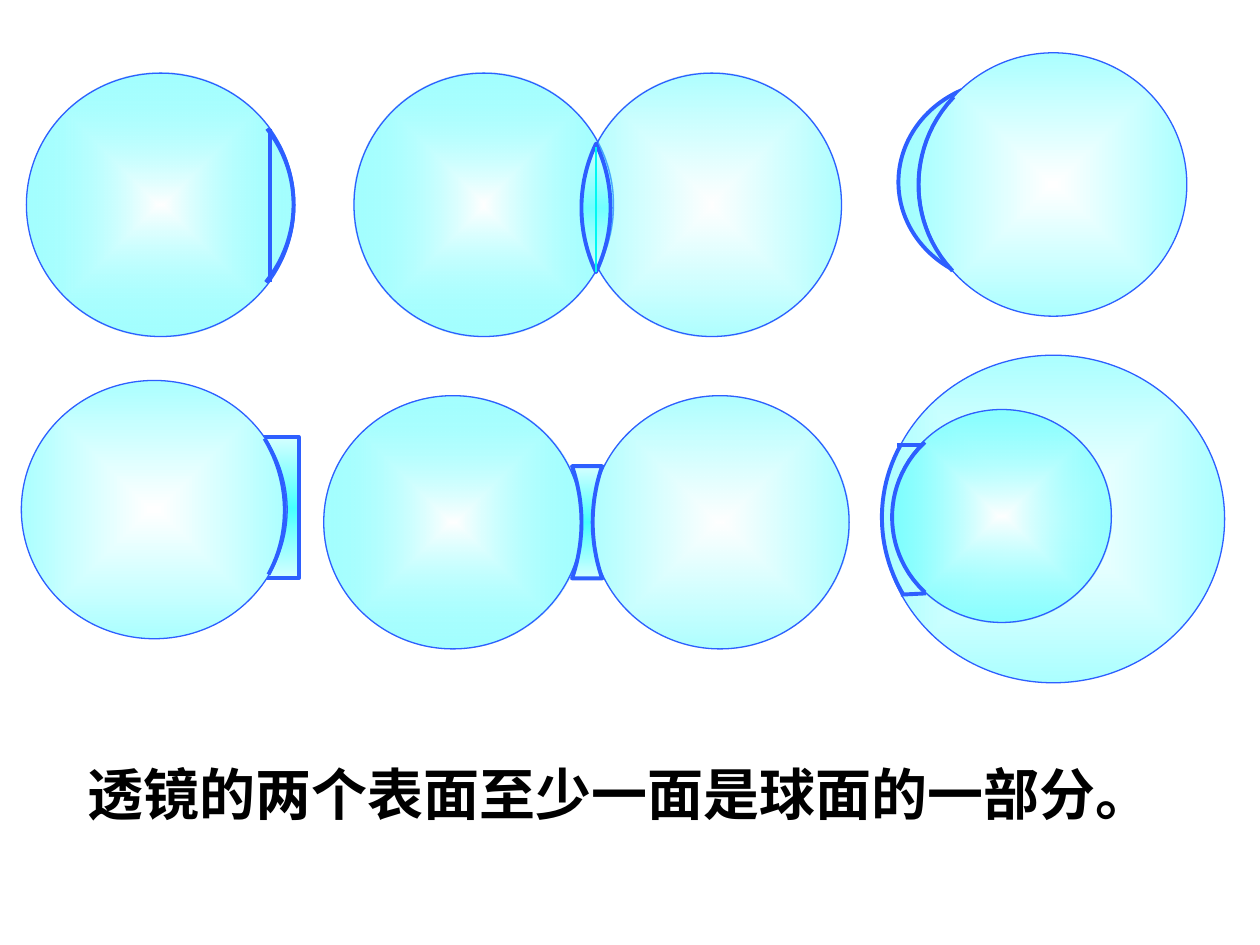
import math

import pptx
import pptx.dml.color
import pptx.enum.shapes
import pptx.enum.text
import pptx.oxml
import pptx.oxml.ns
import pptx.util

Pt = pptx.util.Pt
SHAPE = pptx.enum.shapes.MSO_SHAPE
OUTLINE = "2D5FFF"
THIN, THICK = 0.75, 2.25
CENTRE = '<a:path path="shape"><a:fillToRect l="50000" t="50000" r="50000" b="50000"/></a:path>'
VERTICAL = '<a:lin ang="5400000" scaled="0"/>'
DEEP = ([(0, "FFFFFF", 100), (100, "47FFFF", 49)], CENTRE)
CLEAR = ([(0, "FFFFFF", 43), (100, "47FFFF", 44)], CENTRE)
PALE = ([(0, "FFFFFF", 100), (100, "ABFFFF", 100)], CENTRE)


def glass(middle):
    """Return a vertical gradient that is light at both ends."""
    return [(0, "D5FFFF", 100), (50, middle, 100), (100, "D5FFFF", 100)], VERTICAL


def rgb(value):
    """Turn a hex string into a colour."""
    return pptx.dml.color.RGBColor.from_string(value)


def style(shape, gradient, width):
    """Give a shape its gradient, or no fill, and its outline."""
    shape.shadow.inherit = False
    shape.line.color.rgb = rgb(OUTLINE)
    shape.line.width = Pt(width)
    shape.fill.background()
    if gradient:
        stops, direction = gradient
        marks = "".join(
            f'<a:gs pos="{pos * 1000}"><a:srgbClr val="{colour}">'
            f'<a:alpha val="{alpha * 1000}"/></a:srgbClr></a:gs>'
            for pos, colour, alpha in stops)
        fill = pptx.oxml.parse_xml(
            f'<a:gradFill {pptx.oxml.ns.nsdecls("a")} rotWithShape="1">'
            f'<a:gsLst>{marks}</a:gsLst>{direction}</a:gradFill>')
        properties = shape._element.spPr
        properties.replace(properties.find(pptx.oxml.ns.qn("a:noFill")), fill)


def sphere(slide, left, top, width, height, gradient, outline=THIN):
    """Draw a glass sphere."""
    ball = slide.shapes.add_shape(SHAPE.OVAL, Pt(left), Pt(top), Pt(width), Pt(height))
    style(ball, gradient, outline)


def edge(slide, x1, y1, x2, y2, colour=OUTLINE, width=THICK):
    """Draw a straight lens edge."""
    side = slide.shapes.add_connector(
        pptx.enum.shapes.MSO_CONNECTOR.STRAIGHT, Pt(x1), Pt(y1), Pt(x2), Pt(y2))
    side.line.color.rgb = rgb(colour)
    side.line.width = Pt(width)
    side._element.spPr.append(
        pptx.oxml.parse_xml(f'<a:effectLst {pptx.oxml.ns.nsdecls("a")}/>'))


def arc(x1, y1, x2, y2, sag, steps=24):
    """Return points of a circular arc, bulging right when sag is positive."""
    half = (y2 - y1) / 2
    depth = abs(sag)
    radius = (half ** 2 + depth ** 2) / (2 * depth)
    points = []
    for step in range(steps + 1):
        share = step / steps
        rise = half * (2 * share - 1)
        bulge = math.sqrt(radius ** 2 - rise ** 2) - radius + depth
        points.append((x1 + (x2 - x1) * share + math.copysign(bulge, sag),
                       y1 + (y2 - y1) * share))
    return points


def curve(slide, left, top, points, gradient=None):
    """Draw an open curve, or a closed lens when a gradient is given."""
    start, *rest = [(Pt(left + x), Pt(top + y)) for x, y in points]
    builder = slide.shapes.build_freeform(*start)
    builder.add_line_segments(rest, close=gradient is not None)
    style(builder.convert_to_shape(), gradient, THICK)


def plano_convex(slide, left, top):
    """Cut a flat-backed cap from one sphere."""
    sphere(slide, left, top, 153.4, 150.5, DEEP)
    edge(slide, left + 139, top + 31.7, left + 139, top + 119.5)
    curve(slide, left, top, arc(137.5, 31.7, 136.8, 119.5, 15.5))


def biconvex(slide, left, top):
    """Show the overlap of two spheres."""
    sphere(slide, left, top, 148.3, 150.5, DEEP)
    sphere(slide, left + 130.3, top, 148.3, 150.5, CLEAR)
    ends = (138.3, 40.3, 138.3, 113.7)
    curve(slide, left, top, arc(*ends, -8.3) + arc(*ends, 8.3)[::-1], glass("71FFFF"))
    edge(slide, left + 138.3, top + 42.5, left + 138.3, top + 113.7, "00F8F2", 1.5)


def convex_meniscus(slide, left, top):
    """Show the crescent left of a covering sphere."""
    sphere(slide, left, top + 15.9, 125.3, 115.9, DEEP, THICK)
    sphere(slide, left + 12.2, top, 152.6, 150.5, PALE)
    curve(slide, left, top, arc(31.6, 25.2, 30.9, 124.6, -19.8))


def plano_concave(slide, left, top):
    """Press one sphere into a flat block."""
    block = slide.shapes.add_shape(
        SHAPE.RIGHT_BRACKET, Pt(left + 138.3), Pt(top + 32.4), Pt(20.2), Pt(80.6))
    block.adjustments[0] = 0
    style(block, glass("47FFFF"), THICK)
    sphere(slide, left, top, 151.9, 147.6, PALE)
    curve(slide, left, top, arc(139, 33.2, 141.2, 110.9, 10.4))


def biconcave(slide, left, top):
    """Fill the gap between two spheres."""
    sphere(slide, left, top, 147.6, 144.7, DEEP)
    sphere(slide, left + 152.6, top, 147.6, 144.7, CLEAR)
    left_side = arc(141.9, 40.3, 141.9, 104.4, 5.4)
    right_side = arc(159.1, 40.3, 159.1, 104.4, -5.4)
    curve(slide, left, top, left_side + right_side[::-1], glass("47FFFF"))


def concave_meniscus(slide, left, top):
    """Show the shell between a large and a small sphere."""
    sphere(slide, left, top, 195.8, 187.2, PALE)
    sphere(slide, left + 5.8, top + 31, 125.3, 121.7, DEEP)
    edge(slide, left + 8.6, top + 51.2, left + 22.3, top + 51.2)
    edge(slide, left + 10.8, top + 136.8, left + 25.2, top + 136.1)
    curve(slide, left, top, arc(10.8, 51.2, 12.2, 136.8, -11.5))
    curve(slide, left, top, arc(24.5, 49.7, 24.5, 135.4, -18.7))


def conclusion(slide, left, top, width, height):
    """Write the closing statement."""
    frame = slide.shapes.add_textbox(Pt(left), Pt(top), Pt(width), Pt(height)).text_frame
    frame.word_wrap = True
    frame.vertical_anchor = pptx.enum.text.MSO_ANCHOR.MIDDLE
    statement = frame.paragraphs[0]
    statement.text = "透镜的两个表面至少一面是球面的一部分。"
    statement.alignment = pptx.enum.text.PP_ALIGN.CENTER
    statement.font.name = "Times New Roman"
    statement.font.size = Pt(32)
    statement.font.bold = True
    statement.font.color.rgb = rgb("000000")


def main():
    """Build the lens slide."""
    deck = pptx.Presentation()
    deck.slide_width, deck.slide_height = Pt(720), Pt(540)
    slide = deck.slides.add_slide(deck.slide_layouts[6])
    biconcave(slide, 185, 226.1)
    biconvex(slide, 202.3, 41.8)
    plano_concave(slide, 12.2, 217.4)
    concave_meniscus(slide, 504, 203)
    plano_convex(slide, 15.1, 41.8)
    convex_meniscus(slide, 513.4, 30.2)
    conclusion(slide, 30.2, 408.2, 648, 90)
    deck.save("out.pptx")


if __name__ == "__main__":
    main()
